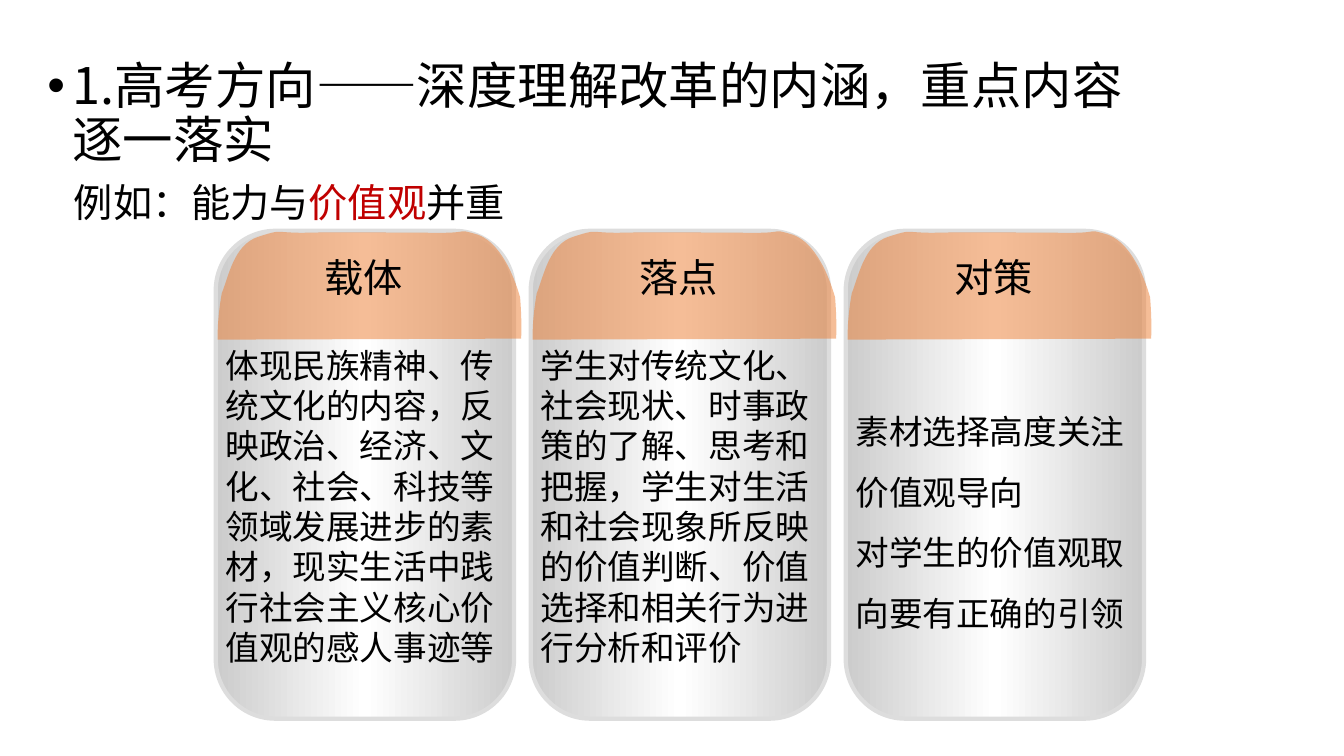
"""Build a slide with a heading and three titled panels."""

import copy
import dataclasses
import typing

import lxml.etree
import pptx
import pptx.dml.color
import pptx.enum.shapes
import pptx.enum.text
import pptx.oxml.ns
import pptx.util

Pt = pptx.util.Pt
COLORS = {"text": "000000", "accent": "C00000", "edge": "CCCCCC",
          "middle": "FFFFFF", "outline": "DDDDDD", "cap": "ED7D31"}
CJK_FONT = "Noto Sans CJK SC"
PANEL_PITCH = 225
CAP_START = (155.5, 242.6)
CAP_CURVES = [
    ((155.5, 242.6), (154.8, 229.7), (158.4, 209.5)),
    ((163.4, 197.3), (167, 175), (184.3, 169.2)),
    ((202.3, 163.4), (195.1, 166.3), (216.7, 166.3)),
    ((238.3, 165.6), (294.5, 166.3), (315.4, 166.3)),
    ((335.5, 166.3), (326.2, 163.4), (339.1, 167)),
    ((351.4, 169.9), (363.6, 185), (371.5, 212.4)),
    ((373, 231.8), (372.2, 241.9), (372.2, 241.9)),
]


@dataclasses.dataclass
class Panel:
    """A titled column of text."""

    title: str
    paragraphs: list[str]
    text_top: float
    text_height: float
    line_height: float


PANELS = [
    Panel("载体", ["体现民族精神、传统文化的内容，反映政治、经济、文化、社会、科技等领域发展进步的素材，"
                 "现实生活中践行社会主义核心价值观的感人事迹等"], 242.6, 239.8, 28.8),
    Panel("落点", ["学生对传统文化、社会现状、时事政策的了解、思考和把握，学生对生活和社会现象所反映的"
                 "价值判断、价值选择和相关行为进行分析和评价"], 242.6, 239.8, 28.8),
    Panel("对策", ["素材选择高度关注价值观导向", "对学生的价值观取向要有正确的引领"],
          275.8, 181.4, 43.2),
]


def rgb(name: str) -> pptx.dml.color.RGBColor:
    """Return a named colour."""
    return pptx.dml.color.RGBColor.from_string(COLORS[name])


def add_child(parent: typing.Any, tag: str, **attributes: str) -> typing.Any:
    """Append a drawing element to a parent and return it."""
    child = lxml.etree.SubElement(parent, pptx.oxml.ns.qn(tag))
    for name, value in attributes.items():
        child.set(name, value)
    return child


def add_run(paragraph: typing.Any, text: str, size: float,
            color: str = "text", font: str = CJK_FONT) -> None:
    """Add one formatted run."""
    run = paragraph.add_run()
    run.text = text
    run.font.size = Pt(size)
    run.font.color.rgb = rgb(color)
    run.font.name = font
    add_child(run.font._element, "a:ea", typeface=CJK_FONT)


def format_body(body: typing.Any) -> None:
    """Place the body placeholder and write the heading and its example."""
    body.left, body.top, body.width, body.height = (
        Pt(value) for value in (26.6, 39.6, 796.3, 466.6))
    frame = body.text_frame
    frame.auto_size = pptx.enum.text.MSO_AUTO_SIZE.NONE
    frame.vertical_anchor = pptx.enum.text.MSO_ANCHOR.TOP
    frame.margin_top = Pt(3.8)
    heading, example = frame.paragraphs[0], frame.add_paragraph()
    for paragraph, line_height, margin, indent in (
            (heading, 38.6, 18, -18), (example, 30.2, 19, 0)):
        paragraph.line_spacing = Pt(line_height)
        paragraph.space_before = Pt(10)
        properties = paragraph._p.get_or_add_pPr()
        properties.set("marL", str(Pt(margin)))
        properties.set("indent", str(Pt(indent)))
    add_child(heading._p.pPr, "a:buFont", typeface="Arial")
    add_child(heading._p.pPr, "a:buChar", char="•")
    add_child(example._p.pPr, "a:buNone")
    add_run(heading, "1.高考方向——深度理解改革的内涵，重点内容逐一落实", 36)
    for text, color in (("例如：能力与", "text"), ("价值观", "accent"), ("并重", "text")):
        add_run(example, text, 28, color, "Calibri")


def add_text(shapes: typing.Any, box: tuple[float, float, float, float],
             texts: list[str], size: float, line_height: float,
             alignment: pptx.enum.text.PP_ALIGN) -> None:
    """Add a wrapped text box with one run per paragraph."""
    frame = shapes.add_textbox(*(Pt(value) for value in box)).text_frame
    frame.word_wrap = True
    frame.auto_size = pptx.enum.text.MSO_AUTO_SIZE.SHAPE_TO_FIT_TEXT
    frame.margin_top = Pt(3.6)
    for index, text in enumerate(texts):
        paragraph = frame.add_paragraph() if index else frame.paragraphs[0]
        paragraph.alignment = alignment
        paragraph.line_spacing = Pt(line_height)
        add_run(paragraph, text, size)


def add_card(shapes: typing.Any, offset: float) -> None:
    """Add the rounded gradient background of a panel."""
    card = shapes.add_shape(
        pptx.enum.shapes.MSO_SHAPE.ROUNDED_RECTANGLE,
        Pt(86.4 + offset), Pt(232.6), Pt(348.5), Pt(213.1))
    card.rotation = 90
    card.adjustments[0] = 0.2
    card.shadow.inherit = False
    card.line.color.rgb = rgb("outline")
    card.line.width = Pt(3)
    card.fill.gradient()
    card.fill.gradient_angle = 90
    for stop, color, position in zip(card.fill.gradient_stops, ("edge", "middle"), (0, 0.5)):
        stop.color.rgb = rgb(color)
        stop.position = position
    stops = card._element.spPr.find(".//" + pptx.oxml.ns.qn("a:gsLst"))
    last_stop = copy.deepcopy(stops[0])
    last_stop.set("pos", "100000")
    stops.append(last_stop)


def add_cap(shapes: typing.Any, offset: float) -> None:
    """Add the translucent curved cap of a panel."""
    builder = shapes.build_freeform(Pt(CAP_START[0] + offset), Pt(CAP_START[1]))
    builder.add_line_segments([(Pt(x + offset), Pt(y)) for _, _, (x, y) in CAP_CURVES], close=True)
    cap = builder.convert_to_shape()
    cap.shadow.inherit = False
    cap.line.fill.background()
    cap.fill.solid()
    cap.fill.fore_color.rgb = rgb("cap")
    color = cap._element.spPr.find(".//" + pptx.oxml.ns.qn("a:srgbClr"))
    add_child(color, "a:alpha", val="50000")
    segments = cap._element.spPr.findall(".//" + pptx.oxml.ns.qn("a:lnTo"))
    for segment, curve in zip(segments, CAP_CURVES):
        outline = segment.getparent()
        bezier = add_child(outline, "a:cubicBezTo")
        for x, y in curve:
            add_child(bezier, "a:pt", x=str(Pt(x + offset) - cap.left), y=str(Pt(y) - cap.top))
        outline.replace(segment, bezier)


def add_panel(slide: typing.Any, panel: Panel, offset: float) -> None:
    """Add one grouped panel."""
    shapes = slide.shapes.add_group_shape().shapes
    add_card(shapes, offset)
    add_cap(shapes, offset)
    add_text(shapes, (177.1 + offset, 177.1, 165.6, 41), [panel.title],
             28, 33.6, pptx.enum.text.PP_ALIGN.CENTER)
    add_text(shapes, (154 + offset, panel.text_top, 213.8, panel.text_height),
             panel.paragraphs, 24, panel.line_height, pptx.enum.text.PP_ALIGN.LEFT)


def main() -> None:
    """Build and save the presentation."""
    presentation = pptx.Presentation()
    presentation.slide_width, presentation.slide_height = Pt(960), Pt(540)
    slide = presentation.slides.add_slide(presentation.slide_layouts[1])
    title = slide.shapes.title._element
    title.getparent().remove(title)
    format_body(slide.placeholders[1])
    for index, panel in enumerate(PANELS):
        add_panel(slide, panel, index * PANEL_PITCH)
    presentation.save("out.pptx")


if __name__ == "__main__":
    main()
